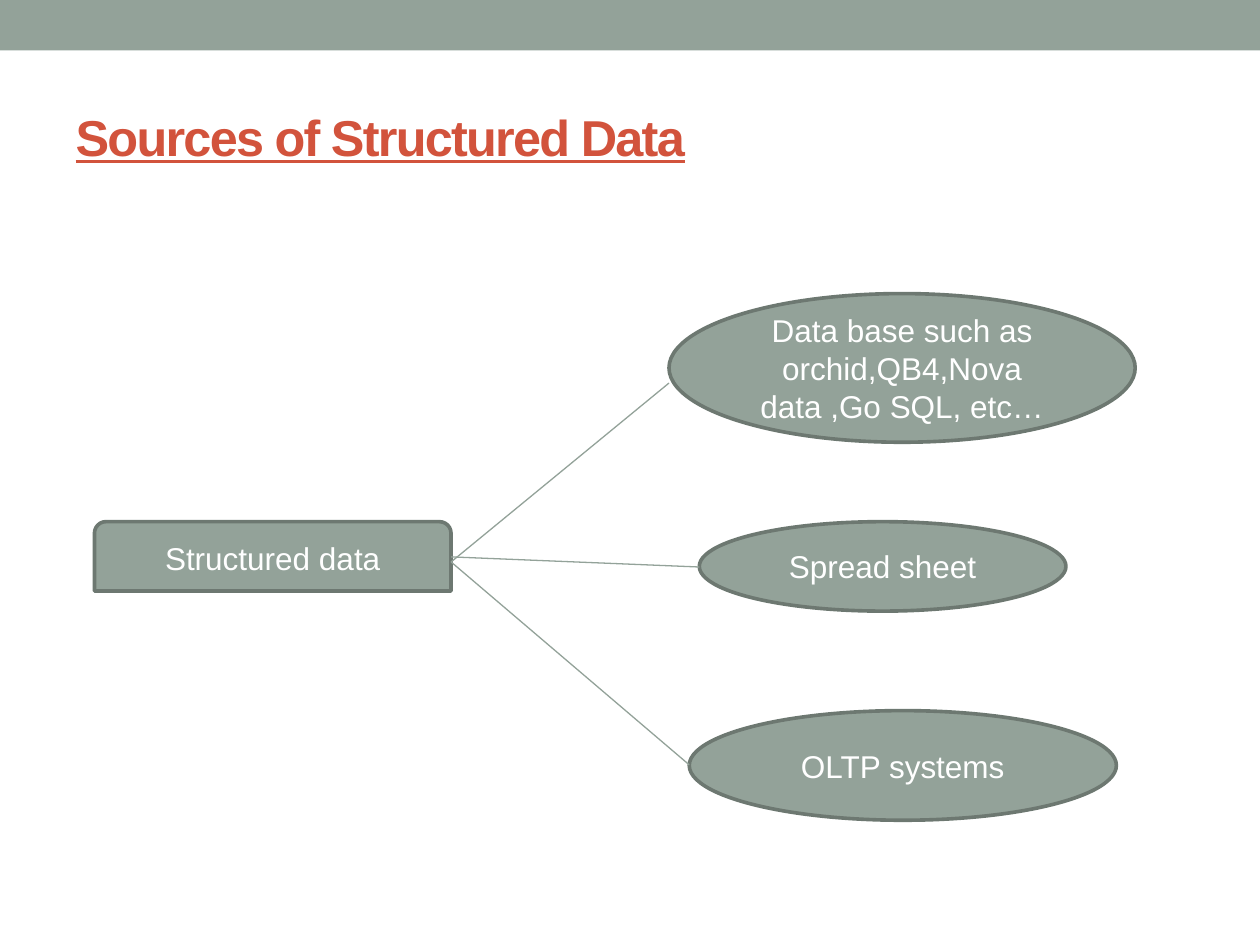
from pptx import Presentation
from pptx.dml.color import RGBColor
from pptx.enum.shapes import MSO_CONNECTOR, MSO_SHAPE
from pptx.enum.text import MSO_ANCHOR, PP_ALIGN
from pptx.oxml.ns import qn
from pptx.util import Inches, Pt
from lxml import etree

SAGE, EDGE, RED, WHITE = "93A299", "6D7871", "D2533C", "FFFFFF"

# Each source: text, box, and the point where its line arrives
ROOT_BOX = (0.75, 4.14, 2.83, 0.55)
SOURCES = [
    ("Data base such as orchid,QB4,Nova data ,Go SQL, etc…",
     (5.31, 2.33, 3.7, 1.18), 3.04),
    ("Spread sheet", (5.55, 4.14, 2.91, 0.71), 4.5),
    ("OLTP systems", (5.47, 5.64, 3.39, 0.87), 6.07),
]
FAN_Y = [4.46, 4.42, 4.46]


def color(value):
    return RGBColor.from_string(value)


def inches(box):
    return [Inches(v) for v in box]


def add_block(slide, kind, box, line=None):
    sp = slide.shapes.add_shape(kind, *inches(box))
    sp.shadow.inherit = False
    sp.fill.solid()
    sp.fill.fore_color.rgb = color(SAGE)
    if line:
        sp.line.color.rgb = color(line)
        sp.line.width = Pt(2.08)
    else:
        sp.line.fill.background()
    return sp


def add_node(slide, kind, box, text):
    tf = add_block(slide, kind, box, EDGE).text_frame
    tf.word_wrap = True
    tf.vertical_anchor = MSO_ANCHOR.MIDDLE
    p = tf.paragraphs[0]
    p.text = text
    p.alignment = PP_ALIGN.CENTER
    p.font.size, p.font.name = Pt(18), "Arial"
    p.font.color.rgb = color(WHITE)


def add_line(slide, start, end):
    line = slide.shapes.add_connector(
        MSO_CONNECTOR.STRAIGHT, *inches(start + end))
    line.line.color.rgb = color(SAGE)
    line.line.width = Pt(0.75)
    etree.SubElement(line._element.spPr, qn("a:effectLst"))


def add_title(slide, box, text):
    title = slide.shapes.title
    title.left, title.top, title.width, title.height = inches(box)
    tf = title.text_frame
    tf.word_wrap = True
    tf.vertical_anchor = MSO_ANCHOR.MIDDLE
    p = tf.paragraphs[0]
    p.alignment = PP_ALIGN.LEFT
    r = p.add_run()
    r.text = text
    r.font.size, r.font.name = Pt(28.8), "Arial"
    r.font.bold = r.font.underline = True
    r.font.color.rgb = color(RED)
    r._r.get_or_add_rPr().set("spc", "-100")  # tighter letters


def add_diagram(slide, root_box):
    left, top, width, height = root_box
    add_node(slide, MSO_SHAPE.ROUND_2_SAME_RECTANGLE, root_box,
             "Structured data")
    for text, box, _ in SOURCES:
        add_node(slide, MSO_SHAPE.OVAL, box, text)
    for (_, box, end_y), start_y in zip(SOURCES, FAN_Y):
        add_line(slide, (left + width, start_y), (box[0], end_y))


def main():
    prs = Presentation()
    prs.slide_width, prs.slide_height = Inches(10), Inches(7.5)
    s = prs.slides.add_slide(prs.slide_layouts[5])
    # Top band, title, then the fan of sources
    add_block(s, MSO_SHAPE.RECTANGLE, (0, 0, 10, 0.4))
    add_title(s, (0.5, 0.77, 9, 0.62), "Sources of Structured Data")
    add_diagram(s, ROOT_BOX)
    prs.save("out.pptx")


if __name__ == "__main__":
    main()
